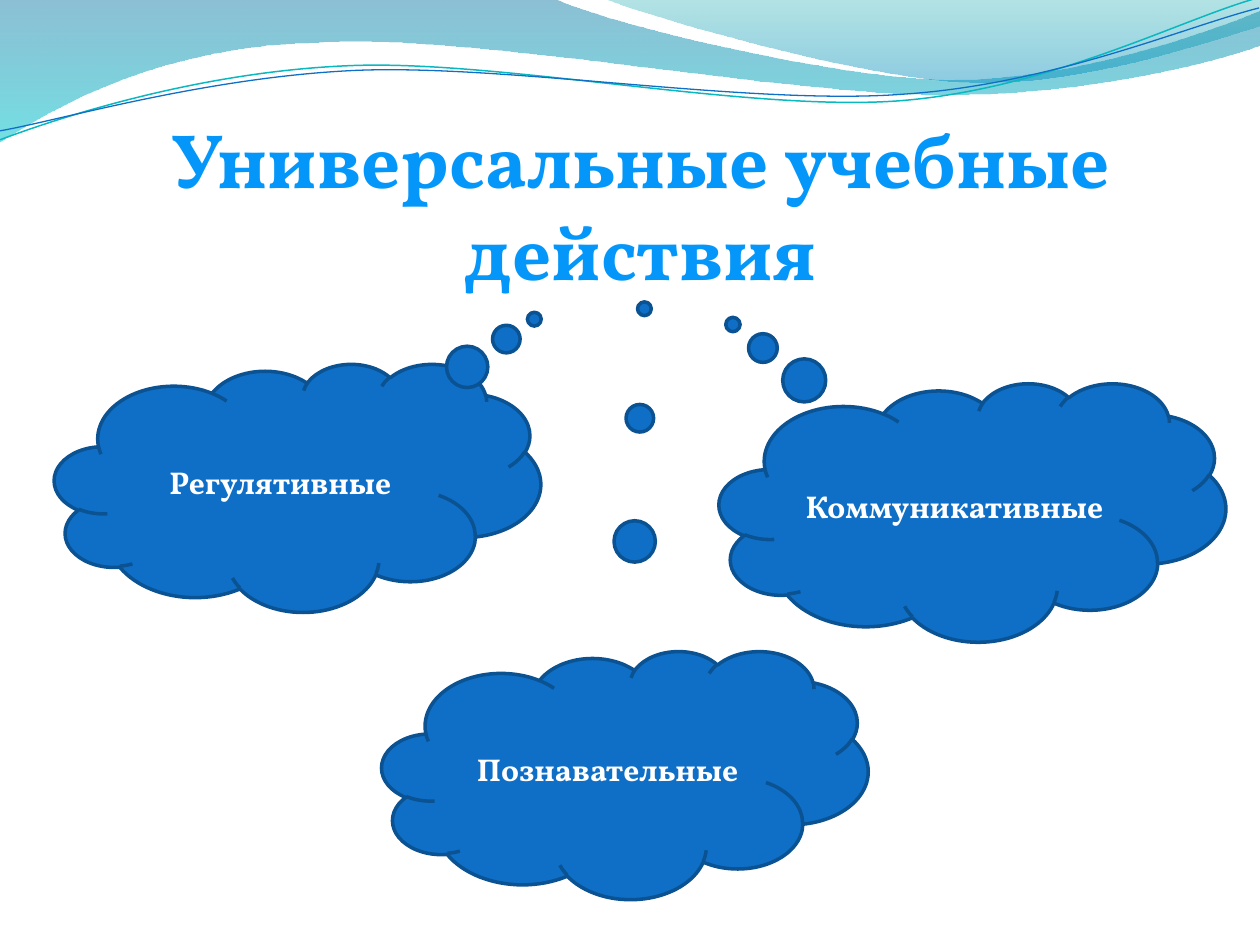
from lxml.etree import SubElement
from pptx import Presentation
from pptx.dml.color import RGBColor
from pptx.enum.shapes import MSO_SHAPE
from pptx.enum.text import MSO_ANCHOR, MSO_AUTO_SIZE, PP_ALIGN
from pptx.oxml.ns import qn
from pptx.util import Cm, Pt

FONT = "Vollkorn"
TILT = 357.3

BANDS = [
    ((-0.03, -0.03, 25.45, 2.9),
     [(0.03, 0.03), (11.21, 0.01), (12.12, 0.46, 16.9, 1.63, 19.28, 1.63),
      (21.7, 1.63, 24.36, 0.69, 25.43, 0.26), (25.45, 0.94),
      (25, 1.15, 22.13, 1.96, 18.98, 1.94),
      (15.83, 1.94, 9.73, 0.74, 6.56, 0.89),
      (3.31, 0.94, 1.2, 2.14, 0, 2.9)],
     [("0074A1", 45), ("00C6CF", 55)]),
    ((12.17, -0.03, 13.23, 1.78),
     [(0, 0), (0.76, 0.31, 5.15, 1.6, 7.36, 1.68),
      (9.57, 1.78, 12.24, 0.84, 13.23, 0.56), (13.23, 0.03)],
     [("00A1A9", 30), ("008BBF", 45)]),
]
LINES = [
    ((-0.05, 0.56, 25.45, 1.8),
     [(0, 1.66), (1.24, 1.26, 4.07, 0.48, 7.1, 0.5),
      (10.1, 0.51, 15.07, 1.81, 18.13, 1.73),
      (21.18, 1.64, 23.91, 0.35, 25.45, 0)], "0AB8BF", 0.85),
    ((-0.05, 0.76, 25.48, 1.47),
     [(0, 1.28), (1.21, 1.13, 4.22, 0.39, 7.25, 0.4),
      (10.3, 0.42, 15.18, 1.49, 18.24, 1.4),
      (21.27, 1.34, 23.99, 0.3, 25.48, 0)], "0F6FC6", 0.75),
]
CLOUDS = [
    ("Регулятивные", (1.1, 7.33, 9.8, 5), (0.487, -0.679)),
    ("Коммуникативные", (14.5, 7.72, 10.21, 5.21), (-0.473, -0.726)),
    ("Познавательные", (7.7, 13.12, 9.8, 5), (0.04, -1.879)),
]


def color(text):
    return RGBColor.from_string(text)


def place(shape, box):
    shape.left, shape.top, shape.width, shape.height = map(Cm, box)


def outline(slide, box, steps, close):
    ends = [(Cm(step[-2]), Cm(step[-1])) for step in steps]
    pen = slide.shapes.build_freeform(*ends[0])
    pen.add_line_segments(ends[1:], close=close)
    shape = pen.convert_to_shape()
    shape.shadow.inherit = False
    place(shape, box)
    route = next(shape.element.iter(qn("a:path")))
    route.set("w", str(Cm(box[2])))
    route.set("h", str(Cm(box[3])))
    for node, step in zip(route, steps):
        for point in list(node):
            node.remove(point)
        if len(step) == 6:
            node.tag = qn("a:cubicBezTo")
        for x, y in zip(step[::2], step[1::2]):
            SubElement(node, qn("a:pt"), x=str(Cm(x)), y=str(Cm(y)))
    return shape


def add_band(slide, box, steps, stops):
    band = outline(slide, box, steps, True)
    band.line.fill.background()
    band.fill.gradient()
    band.fill.gradient_angle = 270
    for stop, (tint, alpha) in zip(band.fill.gradient_stops, stops):
        stop.color.rgb = color(tint)
    nodes = band.element.spPr.iter(qn("a:srgbClr"))
    for node, (tint, alpha) in zip(nodes, stops):
        SubElement(node, qn("a:alpha"), val=str(alpha * 1000))


def add_line(slide, box, steps, tint, width):
    line = outline(slide, box, steps, False)
    line.rotation = TILT
    line.fill.background()
    line.line.color.rgb = color(tint)
    line.line.width = Pt(width)


def write(frame, text, size, tint, anchor):
    frame.word_wrap = True
    frame.auto_size = MSO_AUTO_SIZE.NONE
    frame.vertical_anchor = anchor
    frame.text = text
    para = frame.paragraphs[0]
    para.alignment = PP_ALIGN.CENTER
    font = para.font
    font.name, font.size, font.bold = FONT, Pt(size), True
    font.color.rgb = color(tint)


def add_title(slide, box):
    title = slide.shapes.title
    title.element.getparent().append(title.element)
    place(title, box)
    write(title.text_frame, "Универсальные учебные действия", 44, "0497F9",
          MSO_ANCHOR.TOP)


def add_cloud(slide, box, text, tail):
    cloud = slide.shapes.add_shape(MSO_SHAPE.CLOUD_CALLOUT, *map(Cm, box))
    cloud.adjustments[0], cloud.adjustments[1] = tail
    cloud.shadow.inherit = False
    cloud.fill.solid()
    cloud.fill.fore_color.rgb = color("0F6FC6")
    cloud.line.color.rgb = color("0B5292")
    cloud.line.width = Pt(2)
    write(cloud.text_frame, text, 18, "FFFFFF", MSO_ANCHOR.MIDDLE)


def main():
    deck = Presentation()
    deck.slide_width, deck.slide_height = Cm(25.4), Cm(19.05)
    slide = deck.slides.add_slide(deck.slide_layouts[5])
    for band in BANDS:
        add_band(slide, *band)
    for line in LINES:
        add_line(slide, *line)
    add_title(slide, (3.09, 2.12, 19.66, 4.01))
    for text, box, tail in CLOUDS:
        add_cloud(slide, box, text, tail)
    deck.save("out.pptx")


if __name__ == "__main__":
    main()
